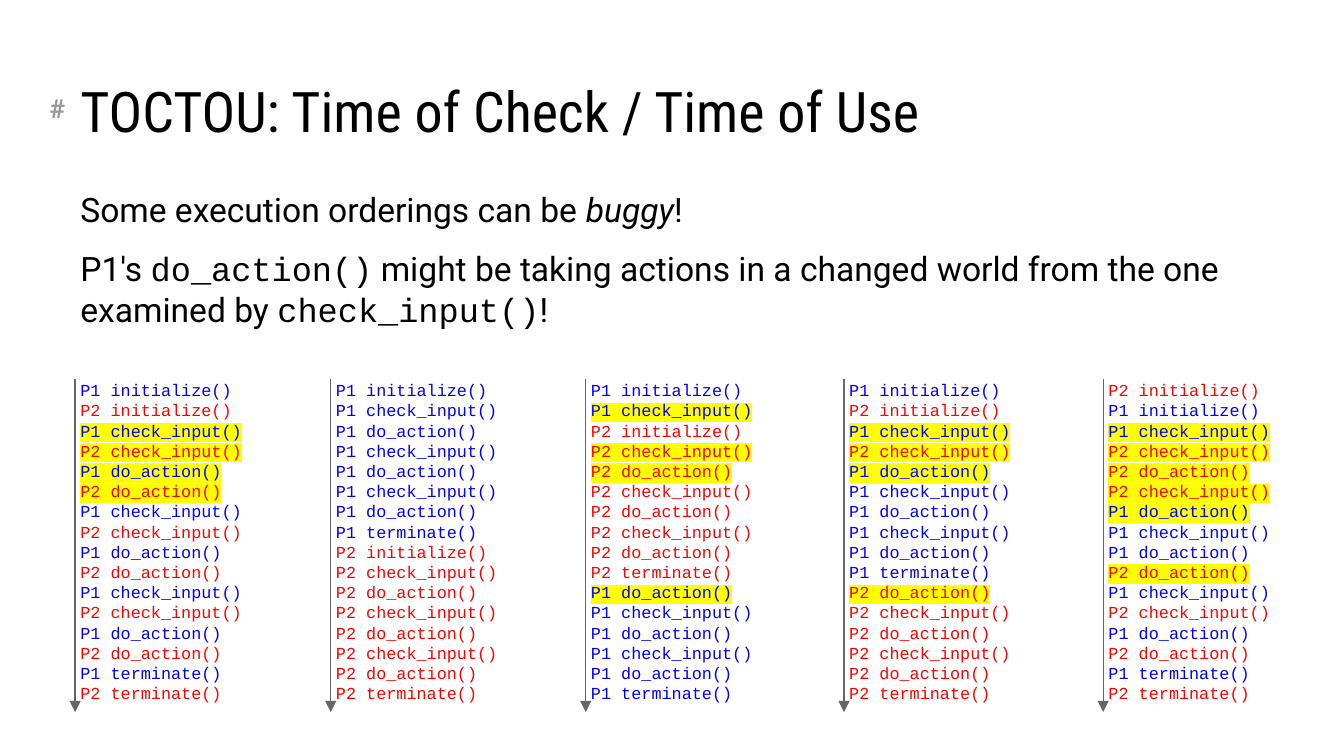
import pptx
import pptx.dml.color
import pptx.enum.shapes
import pptx.enum.text
import pptx.oxml
import pptx.oxml.ns
import pptx.util

Cm, Pt = pptx.util.Cm, pptx.util.Pt
ANCHOR = pptx.enum.text.MSO_ANCHOR

TITLE = "TOCTOU: Time of Check / Time of Use"
SANS, CODE = "Roboto", "Courier New"
BODY = [
    [("Some execution orderings can be ", SANS, False), ("buggy", SANS, True),
     ("!", SANS, False)],
    [("P1's ", SANS, False), ("do_action()", CODE, False),
     (" might be taking actions in a changed world from the one examined by ",
      SANS, False),
     ("check_input()", CODE, False), ("!", SANS, False)],
]

# Each step is process number, call letter, and * when highlighted.
CALLS = {"i": "initialize()", "c": "check_input()",
         "a": "do_action()", "t": "terminate()"}
PROCESS_COLOURS = {"1": "0000FF", "2": "FF0000"}
ORDERINGS = [
    (1.27, "1i 2i 1c* 2c* 1a* 2a* 1c 2c 1a 2a 1c 2c 1a 2a 1t 2t"),
    (6.10, "1i 1c 1a 1c 1a 1c 1a 1t 2i 2c 2a 2c 2a 2c 2a 2t"),
    (10.92, "1i 1c* 2i 2c* 2a* 2c 2a 2c 2a 2t 1a* 1c 1a 1c 1a 1t"),
    (15.80, "1i 2i 1c* 2c* 1a* 1c 1a 1c 1a 1t 2a* 2c 2a 2c 2a 2t"),
    (20.70, "2i 1i 1c* 2c* 2a* 2c* 1a* 1c 1a 2a* 1c 2c 1a 2a 1t 2t"),
]
LIST_TOP, LIST_WIDTH, LIST_HEIGHT = 6.93, 3.56, 6.38
ARROW_TOP, ARROW_BOTTOM, ARROW_OFFSET = 7.16, 13.46, 0.15


def colour(value):
    return pptx.dml.color.RGBColor.from_string(value)


def add_box(page, left, top, width, height, wrap=True, anchor=ANCHOR.TOP):
    """Add a text box with equal insets and return its text frame."""
    frame = page.shapes.add_textbox(Cm(left), Cm(top), Cm(width), Cm(height)).text_frame
    frame.word_wrap = wrap
    frame.vertical_anchor = anchor
    frame.margin_left = frame.margin_right = Cm(0.25)
    frame.margin_top = frame.margin_bottom = Cm(0.25)
    return frame


def style(span, font, size, value="000000", bold=False, italic=False):
    span.font.name = font
    span.font.size = Pt(size)
    span.font.bold = bold
    span.font.italic = italic
    span.font.color.rgb = colour(value)


def add_highlight(span, value):
    mark = pptx.oxml.parse_xml(
        f'<a:highlight {pptx.oxml.ns.nsdecls("a")}><a:srgbClr val="{value}"/></a:highlight>')
    fill = span.font._element.find(pptx.oxml.ns.qn("a:solidFill"))
    fill.addnext(mark)


def add_ordering(page, left, steps):
    """Add one interleaving of calls."""
    steps = steps.split()
    frame = add_box(page, left, LIST_TOP, LIST_WIDTH, LIST_HEIGHT, wrap=False)
    frame.text = "\n".join(f"P{step[0]} {CALLS[step[1]]}" for step in steps)
    for para, step in zip(frame.paragraphs, steps):
        span = para.runs[0]
        style(span, CODE, 9, PROCESS_COLOURS[step[0]])
        if step.endswith("*"):
            add_highlight(span, "FFFF00")


def add_time_arrow(page, x):
    arrow = page.shapes.add_connector(
        pptx.enum.shapes.MSO_CONNECTOR.STRAIGHT,
        Cm(x), Cm(ARROW_TOP), Cm(x), Cm(ARROW_BOTTOM))
    arrow.line.color.rgb = colour("666666")
    arrow.line.width = Pt(0.75)
    names = pptx.oxml.ns.nsdecls("a")
    arrow.line._get_or_add_ln().append(
        pptx.oxml.parse_xml(f'<a:tailEnd {names} type="triangle"/>'))
    arrow._element.spPr.append(pptx.oxml.parse_xml(f"<a:effectLst {names}/>"))


def main():
    deck = pptx.Presentation()
    deck.slide_width, deck.slide_height = Cm(25.4), Cm(14.29)
    page = deck.slides.add_slide(deck.slide_layouts[6])

    number = add_box(page, 0.69, 1.5, 0.79, 1.19, wrap=False)
    number.text = "#"
    style(number.paragraphs[0].runs[0], SANS, 14, "999999", bold=True)

    title = add_box(page, 1.27, 0.58, 22.86, 2.39, anchor=ANCHOR.BOTTOM)
    title.text = TITLE
    style(title.paragraphs[0].runs[0], "Roboto Condensed", 30)

    body = add_box(page, 1.27, 3.33, 22.86, 3.07)
    for index, spans in enumerate(BODY):
        para = body.add_paragraph() if index else body.paragraphs[0]
        if index:
            para.space_before = para.space_after = Pt(10)
        for text, font, italic in spans:
            span = para.add_run()
            span.text = text
            style(span, font, 18, italic=italic)

    for left, steps in ORDERINGS:
        add_ordering(page, left, steps)
        add_time_arrow(page, left + ARROW_OFFSET)

    deck.save("out.pptx")


if __name__ == "__main__":
    main()
